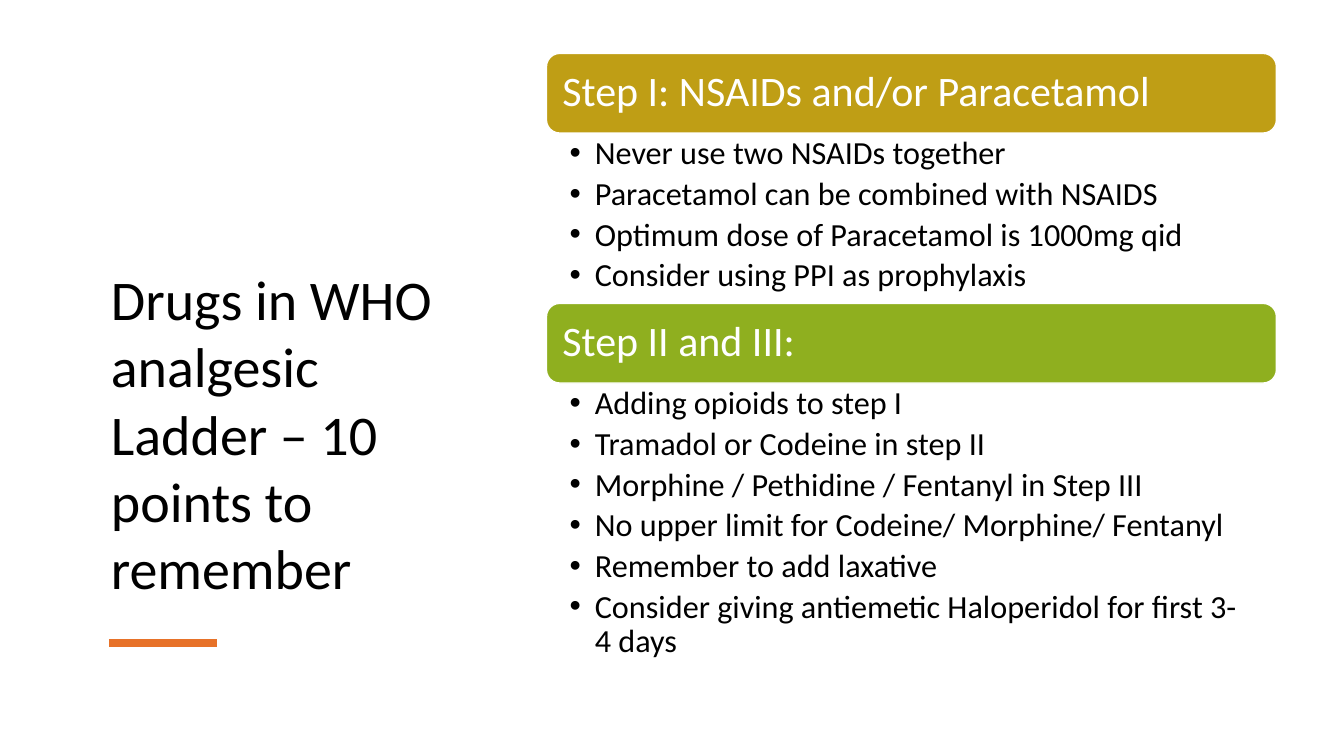
from lxml.etree import SubElement
from pptx import Presentation
from pptx.dml.color import RGBColor
from pptx.enum.shapes import MSO_CONNECTOR as Connector, MSO_SHAPE as Shape
from pptx.enum.text import MSO_ANCHOR as Anchor, MSO_AUTO_SIZE as AutoSize, PP_ALIGN as Align
from pptx.oxml.ns import qn
from pptx.util import Inches, Pt

WIDTH, HEIGHT = 13.33, 7.5
HEADER_HEIGHT = 0.79
STEPS_LEFT, STEPS_WIDTH = 5.42, 7.24
STEPS = [
    ("Step I: NSAIDs and/or Paracetamol", "BF9E15", 0.53, 1.7, [
        "Never use two NSAIDs together",
        "Paracetamol can be combined with NSAIDS",
        "Optimum dose of Paracetamol is 1000mg qid",
        "Consider using PPI as prophylaxis",
    ]),
    ("Step II and III:", "8FAF1F", 3.01, 3.26, [
        "Adding opioids to step I",
        "Tramadol or Codeine in step II",
        "Morphine / Pethidine / Fentanyl in Step III",
        "No upper limit for Codeine/ Morphine/ Fentanyl",
        "Remember to add laxative",
        "Consider giving antiemetic Haloperidol for first 3-4 days",
    ]),
]


def color(value):
    """Turn a hex string into a colour."""
    return RGBColor.from_string(value)


def add_bullet(paragraph):
    """Give a paragraph a hanging bullet."""
    properties = paragraph._p.get_or_add_pPr()
    properties.set("marL", str(Inches(0.25)))
    properties.set("indent", str(-Inches(0.25)))
    SubElement(properties, qn("a:buFont")).set("typeface", "Arial")
    SubElement(properties, qn("a:buChar")).set("char", "•")


def write(shape, lines, size, hex_color="000000", anchor=Anchor.TOP,
          margins=(0.1, 0.05), spacing=1.0, after=0, bullets=False):
    """Write formatted paragraphs into a shape."""
    frame = shape.text_frame
    frame.word_wrap = True
    frame.auto_size = AutoSize.NONE
    frame.vertical_anchor = anchor
    frame.margin_left = frame.margin_right = Inches(margins[0])
    frame.margin_top = frame.margin_bottom = Inches(margins[1])
    for index, line in enumerate(lines):
        paragraph = frame.add_paragraph() if index else frame.paragraphs[0]
        paragraph.text = line
        paragraph.alignment = Align.LEFT
        paragraph.line_spacing = spacing
        paragraph.space_after = Pt(after)
        if bullets:
            add_bullet(paragraph)
        paragraph.font.name = "Calibri"
        paragraph.font.size = Pt(size)
        paragraph.font.color.rgb = color(hex_color)


def add_title(slide, left, top, width, height):
    """Place the title and the accent rule below it."""
    title = slide.shapes.title
    title.left, title.top = Inches(left), Inches(top)
    title.width, title.height = Inches(width), Inches(height)
    write(title, ["Drugs in WHO analgesic Ladder – 10 points to remember"], 40,
          anchor=Anchor.BOTTOM)
    rule_left, rule_top = left + 0.08, top + height + 0.37
    rule = slide.shapes.add_connector(
        Connector.STRAIGHT, Inches(rule_left), Inches(rule_top),
        Inches(rule_left + 1.07), Inches(rule_top))
    rule.line.color.rgb = color("E77229")
    rule.line.width = Pt(6)
    SubElement(rule._element.spPr, qn("a:effectLst"))


def add_step(slide, heading, fill, points, left, top, width, list_height):
    """Place a coloured step header with its bulleted points below."""
    header = slide.shapes.add_shape(
        Shape.ROUNDED_RECTANGLE, Inches(left), Inches(top),
        Inches(width), Inches(HEADER_HEIGHT))
    header.shadow.inherit = False
    header.fill.solid()
    header.fill.fore_color.rgb = color(fill)
    header.line.color.rgb = color("FFFFFF")
    header.line.width = Pt(1)
    write(header, [heading], 30, "FFFFFF", Anchor.MIDDLE, (0.12, 0.12), 0.9)
    box = slide.shapes.add_textbox(
        Inches(left), Inches(top + HEADER_HEIGHT), Inches(width), Inches(list_height))
    write(box, points, 23, margins=(0.23, 0.04), spacing=0.9, after=4.2, bullets=True)


def main():
    """Build and save the slide."""
    presentation = Presentation()
    presentation.slide_width, presentation.slide_height = Inches(WIDTH), Inches(HEIGHT)
    slide = presentation.slides.add_slide(presentation.slide_layouts[5])
    add_title(slide, 1, 1, 3.88, 5.01)
    for heading, fill, top, list_height, points in STEPS:
        add_step(slide, heading, fill, points, STEPS_LEFT, top, STEPS_WIDTH, list_height)
    presentation.save("out.pptx")


if __name__ == "__main__":
    main()
